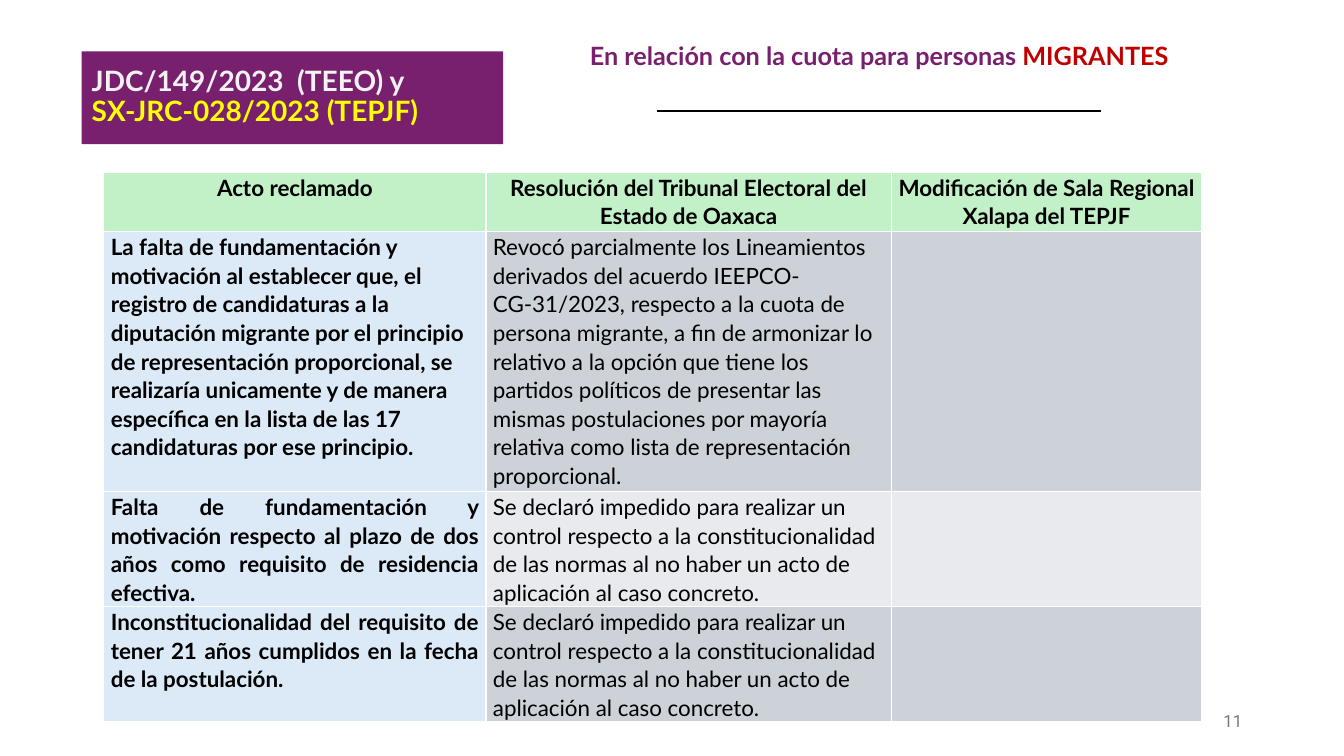
from dataclasses import dataclass

from pptx import Presentation
from pptx.dml.color import RGBColor
from pptx.enum import shapes, text
from pptx.util import Inches, Pt


@dataclass(frozen=True)
class Theme:
    font: str = "Lato"
    plum: str = "78206E"
    red: str = "C00000"
    pale: str = "F2F2F2"
    yellow: str = "FFFF00"
    black: str = "000000"
    gray: str = "797979"
    green: str = "C2F1C8"
    blue: str = "DCEAF7"
    dark: str = "CCD2D8"
    light: str = "E8EAED"
    title: int = 20
    head: int = 18
    body: int = 16
    small: int = 12


T = Theme()
A = text.PP_ALIGN


def paint(fill, tone):
    fill.solid()
    fill.fore_color.rgb = RGBColor.from_string(tone)


def write(frame, runs, size, bold=True, font=T.font, **form):
    """Fill the first paragraph with (text, colour) runs; form sets paragraph values."""
    frame.word_wrap = True
    par = frame.paragraphs[0]
    for name, value in form.items():
        setattr(par, name, value)
    for words, tone in runs:
        if words == "\n":
            par.add_line_break()
            continue
        run = par.add_run()
        run.text = words
        for name, value in {"name": font, "size": Pt(size), "bold": bold}.items():
            setattr(run.font, name, value)
        run.font.color.rgb = RGBColor.from_string(tone)


deck = Presentation()
deck.slide_width, deck.slide_height = Inches(13.33), Inches(7.5)
slide = deck.slides.add_slide(deck.slide_layouts[5])

# Rule under the topic
rule = slide.shapes.add_shape(shapes.MSO_SHAPE.RECTANGLE, Inches(6.52), Inches(1.1),
                              Inches(4.4), Inches(0.01))
rule.shadow.inherit = False
paint(rule.fill, T.black)
paint(rule.line.fill, T.black)
rule.line.width = Pt(0.75)

# Topic
topic = slide.shapes.add_textbox(Inches(5.08), Inches(0.35), Inches(7.28), Inches(0.4))
write(topic.text_frame, [("En relación con la cuota para personas ", T.plum),
                         ("MIGRANTES", T.red)], T.head, alignment=A.CENTER)

# Title with the case numbers
title = slide.shapes.title
for name, value in {"left": 0.81, "top": 0.51, "width": 4.18, "height": 0.92}.items():
    setattr(title, name, Inches(value))
paint(title.fill, T.plum)
title.text_frame.auto_size = text.MSO_AUTO_SIZE.NONE
title.text_frame.vertical_anchor = text.MSO_ANCHOR.MIDDLE
write(title.text_frame, [("JDC/149/2023  (TEEO) y ", T.pale), ("\n", T.pale),
                         ("SX-JRC-028/2023 (TEPJF)", T.yellow)],
      T.title, alignment=A.LEFT, line_spacing=0.9)

# Table of claims and rulings
barred = ("Se declaró impedido para realizar un control respecto a la constitucionalidad "
          "de las normas al no haber un acto de aplicación al caso concreto.")
rows = [
    ("Acto reclamado",
     "Resolución del Tribunal Electoral del Estado de Oaxaca",
     "Modificación de Sala Regional Xalapa del TEPJF"),
    ("La falta de fundamentación y motivación al establecer que, el registro de "
     "candidaturas a la diputación migrante por el principio de representación "
     "proporcional, se realizaría unicamente y de manera específica en la lista de "
     "las 17 candidaturas por ese principio.",
     "Revocó parcialmente los Lineamientos derivados del acuerdo IEEPCO-CG-31/2023, "
     "respecto a la cuota de persona migrante, a fin de armonizar lo relativo a la "
     "opción que tiene los partidos políticos de presentar las mismas postulaciones "
     "por mayoría relativa como lista de representación proporcional.",
     ""),
    ("Falta de fundamentación y motivación respecto al plazo de dos años como "
     "requisito de residencia efectiva.", barred, ""),
    ("Inconstitucionalidad del requisito de tener 21 años cumplidos en la fecha de "
     "la postulación.", barred, ""),
]
widths, heights = [3.79, 4.02, 3.08], [0.59, 2.58, 0.99, 0.99]
table = slide.shapes.add_table(len(rows), len(widths), Inches(1.03), Inches(1.71),
                               Inches(sum(widths)), Inches(sum(heights))).table
for col, width in zip(table.columns, widths):
    col.width = Inches(width)
for row, height in zip(table.rows, heights):
    row.height = Inches(height)

pads = {"margin_left": 0.07, "margin_right": 0.07, "margin_top": 0, "margin_bottom": 0}
for r, row in enumerate(rows):
    for c, words in enumerate(row):
        cell = table.cell(r, c)
        band = T.dark if r % 2 else T.light
        paint(cell.fill, T.green if r == 0 else T.blue if c == 0 else band)
        if not words:
            continue
        for name, value in pads.items():
            setattr(cell, name, Inches(value))
        align = A.CENTER if r == 0 else A.JUSTIFY if c == 0 and r > 1 else A.LEFT
        write(cell.text_frame, [(words, T.black)], T.body, bold=r == 0 or c == 0,
              alignment=align, line_spacing=1.07, space_after=Pt(8))

# Page number
page = slide.shapes.add_textbox(Inches(9.42), Inches(6.95), Inches(3), Inches(0.4))
page.text_frame.vertical_anchor = text.MSO_ANCHOR.MIDDLE
write(page.text_frame, [("11", T.gray)], T.small, bold=False, font="Roboto",
      alignment=A.RIGHT)

deck.save("out.pptx")
